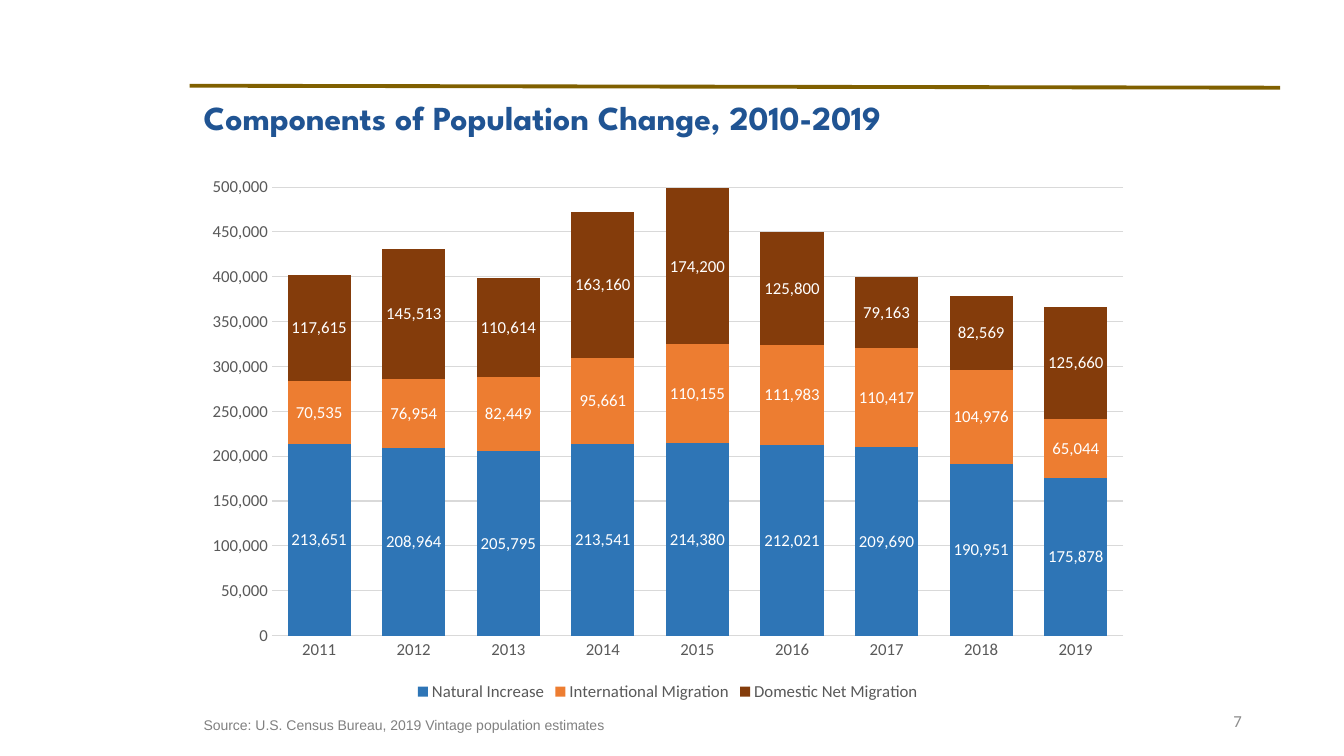
import pptx
import pptx.chart.data
import pptx.dml.color
import pptx.enum.chart
import pptx.enum.shapes
import pptx.enum.text
import pptx.oxml
import pptx.util
from pptx.util import Cm

RGBColor = pptx.dml.color.RGBColor
GOLD = RGBColor(0x80, 0x60, 0x00)
TITLE_BLUE = RGBColor(0x20, 0x54, 0x93)
SOURCE_GRAY = RGBColor(0x80, 0x80, 0x80)
NUMBER_GRAY = RGBColor(0x8C, 0x8C, 0x8C)
AXIS_GRAY = RGBColor(0x59, 0x59, 0x59)
GRID_GRAY = RGBColor(0xD9, 0xD9, 0xD9)
WHITE = RGBColor(0xFF, 0xFF, 0xFF)
BLUE = RGBColor(0x2E, 0x75, 0xB6)
ORANGE = RGBColor(0xED, 0x7D, 0x31)
BROWN = RGBColor(0x84, 0x3C, 0x0B)

LEFT = Cm(4.88)
YEARS = [str(year) for year in range(2011, 2020)]
COMPONENTS = [
    ("Natural Increase", BLUE,
     [213651, 208964, 205795, 213541, 214380, 212021, 209690, 190951, 175878]),
    ("International Migration", ORANGE,
     [70535, 76954, 82449, 95661, 110155, 111983, 110417, 104976, 65044]),
    ("Domestic Net Migration", BROWN,
     [117615, 145513, 110614, 163160, 174200, 125800, 79163, 82569, 125660]),
]


def set_values(target, values):
    for name, value in values.items():
        setattr(target, name, value)


def format_font(font, name, size, color, bold=False):
    set_values(font, {"name": name, "size": pptx.util.Pt(size), "bold": bold})
    font.color.rgb = color


def format_line(line, color, width):
    line.color.rgb = color
    line.width = pptx.util.Pt(width)


def fill_text(shape, text, font_values, frame_values, paragraph_values):
    frame = shape.text_frame
    frame.text = text
    set_values(frame, {"word_wrap": True, **frame_values})
    paragraph = frame.paragraphs[0]
    set_values(paragraph, paragraph_values)
    format_font(paragraph.runs[0].font, *font_values)


def add_title(slide, text):
    title = slide.shapes.title
    set_values(title, {"left": LEFT, "top": Cm(2.44), "width": Cm(27.48), "height": Cm(1.5)})
    fill_text(title, text, ("League Spartan", 24, TITLE_BLUE, True),
              {"vertical_anchor": pptx.enum.text.MSO_ANCHOR.TOP,
               "auto_size": pptx.enum.text.MSO_AUTO_SIZE.NONE},
              {"alignment": pptx.enum.text.PP_ALIGN.LEFT, "line_spacing": 0.9})


def add_label(slide, box, text, font_values, alignment):
    shape = slide.shapes.add_textbox(*box)
    fill_text(shape, text, font_values,
              {"vertical_anchor": pptx.enum.text.MSO_ANCHOR.MIDDLE},
              {"alignment": alignment})


def add_rule(slide):
    rule = slide.shapes.add_connector(
        pptx.enum.shapes.MSO_CONNECTOR.STRAIGHT,
        Cm(4.78), Cm(2.16), Cm(32.26), Cm(2.21))
    format_line(rule.line, GOLD, 2.75)
    properties = rule.line._get_or_add_ln().getparent()
    properties.append(pptx.oxml.parse_xml(
        '<a:effectLst xmlns:a="http://schemas.openxmlformats.org/drawingml/2006/main"/>'))


def format_axes(chart):
    for axis in (chart.category_axis, chart.value_axis):
        axis.major_tick_mark = pptx.enum.chart.XL_TICK_MARK.NONE
        axis.minor_tick_mark = pptx.enum.chart.XL_TICK_MARK.NONE
        format_font(axis.tick_labels.font, "Calibri", 12, AXIS_GRAY)
    format_line(chart.category_axis.format.line, GRID_GRAY, 0.75)
    value_axis = chart.value_axis
    set_values(value_axis, {"minimum_scale": 0, "maximum_scale": 500000,
                            "major_unit": 50000, "has_major_gridlines": True})
    set_values(value_axis.tick_labels,
               {"number_format": "#,##0", "number_format_is_linked": False})
    value_axis.format.line.fill.background()
    format_line(value_axis.major_gridlines.format.line, GRID_GRAY, 0.75)


def add_population_chart(slide):
    data = pptx.chart.data.CategoryChartData(number_format="#,##0")
    data.categories = YEARS
    for name, _, values in COMPONENTS:
        data.add_series(name, values)
    chart = slide.shapes.add_chart(
        pptx.enum.chart.XL_CHART_TYPE.COLUMN_STACKED,
        LEFT, Cm(4.19), Cm(23.9), Cm(13.59), data).chart
    set_values(chart, {"has_title": False, "has_legend": True})
    format_font(chart.font, "Calibri", 12, AXIS_GRAY)
    set_values(chart.legend, {"position": pptx.enum.chart.XL_LEGEND_POSITION.BOTTOM,
                              "include_in_layout": False})
    format_font(chart.legend.font, "Calibri", 12, AXIS_GRAY)
    format_axes(chart)
    plot = chart.plots[0]
    set_values(plot, {"gap_width": 50, "overlap": 100, "vary_by_categories": False})
    for series, (_, color, _) in zip(plot.series, COMPONENTS):
        series.format.fill.solid()
        series.format.fill.fore_color.rgb = color
        labels = series.data_labels
        set_values(labels, {"show_value": True, "number_format": "#,##0",
                            "number_format_is_linked": False,
                            "position": pptx.enum.chart.XL_LABEL_POSITION.CENTER})
        format_font(labels.font, "Calibri", 12, WHITE)


def main():
    presentation = pptx.Presentation()
    set_values(presentation, {"slide_width": Cm(33.87), "slide_height": Cm(19.05)})
    slide = presentation.slides.add_slide(presentation.slide_layouts[5])
    add_rule(slide)
    add_title(slide, "Components of Population Change, 2010-2019")
    add_population_chart(slide)
    add_label(slide, (LEFT, Cm(17.93), Cm(25.2), Cm(0.69)),
              "Source: U.S. Census Bureau, 2019 Vintage population estimates",
              ("Arial", 10, SOURCE_GRAY), pptx.enum.text.PP_ALIGN.LEFT)
    add_label(slide, (Cm(23.93), Cm(17.65), Cm(7.62), Cm(1.02)), "7",
              ("Calibri", 12, NUMBER_GRAY), pptx.enum.text.PP_ALIGN.RIGHT)
    presentation.save("out.pptx")


if __name__ == "__main__":
    main()
